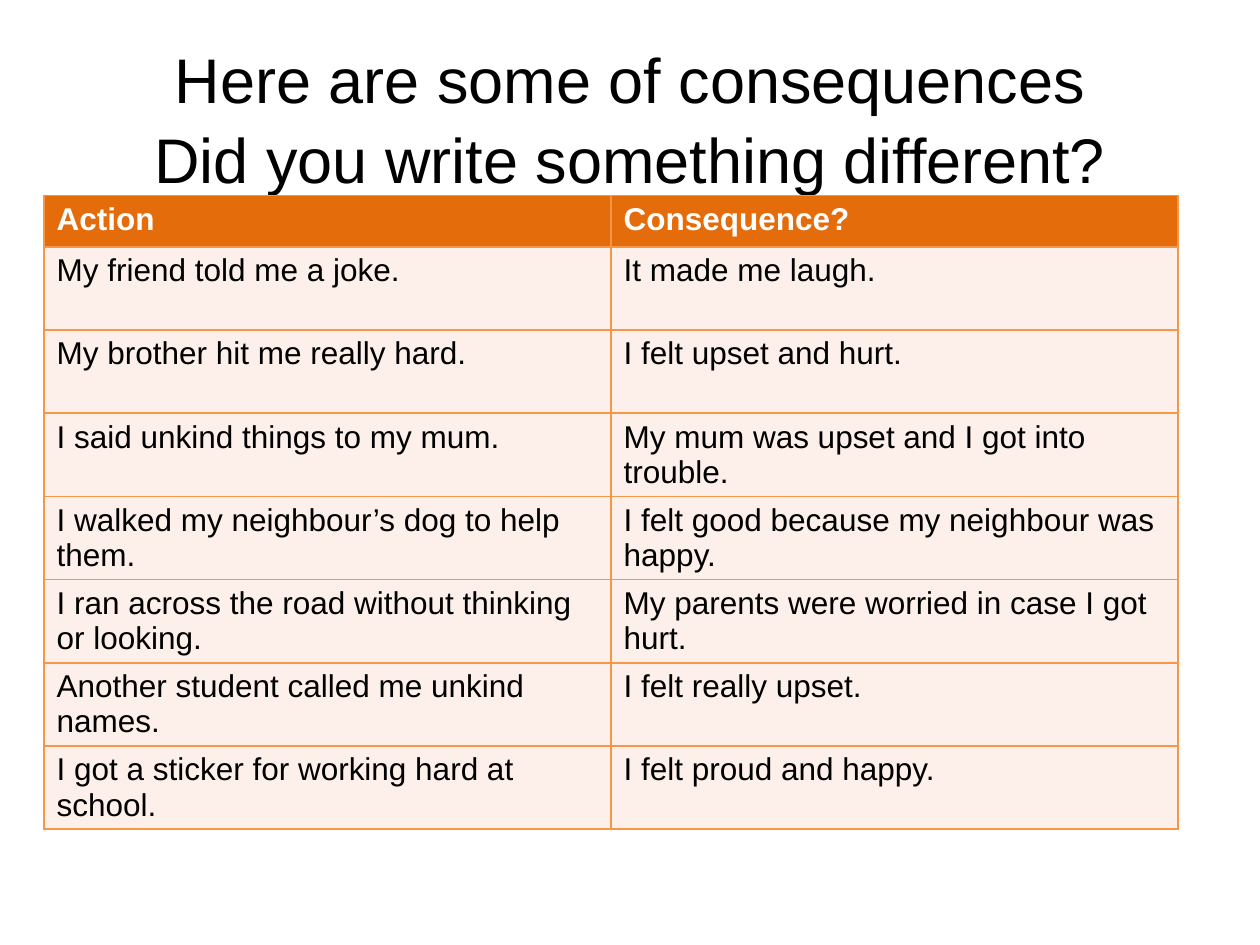
import dataclasses

import lxml.etree
import pptx
import pptx.dml.color
import pptx.enum.text
import pptx.oxml.ns
import pptx.util

Inches = pptx.util.Inches


@dataclasses.dataclass(frozen=True)
class Theme:
    font: str = "Arial"
    title_size: int = 36
    table_size: int = 18
    text: str = "000000"
    header_text: str = "FFFFFF"
    header_fill: str = "E46C0A"
    body_fill: str = "FDEFE9"
    border: str = "F79646"
    border_width: int = 1


THEME = Theme()

TITLE_LINES = ("Here are some of consequences", "Did you write something different?")

ROWS = (
    ("Action", "Consequence?"),
    ("My friend told me a joke.", "It made me laugh."),
    ("My brother hit me really hard.", "I felt upset and hurt."),
    ("I said unkind things to my mum.", "My mum was upset and I got into trouble."),
    ("I walked my neighbour’s dog to help them.", "I felt good because my neighbour was happy."),
    ("I ran across the road without thinking or looking.", "My parents were worried in case I got hurt."),
    ("Another student called me unkind names.", "I felt really upset."),
    ("I got a sticker for working hard at school.", "I felt proud and happy."),
)


def rgb(value):
    return pptx.dml.color.RGBColor.from_string(value)


def add_run(paragraph, text, size, color, bold=False):
    run = paragraph.add_run()
    run.text = text
    run.font.name = THEME.font
    run.font.size = pptx.util.Pt(size)
    run.font.bold = bold
    run.font.color.rgb = rgb(color)


def fill_title(slide):
    title = slide.shapes.title
    title.left, title.top = Inches(0.5), Inches(0.3)
    title.width, title.height = Inches(9), Inches(1.25)
    frame = title.text_frame
    frame.word_wrap = True
    frame.auto_size = pptx.enum.text.MSO_AUTO_SIZE.NONE
    frame.vertical_anchor = pptx.enum.text.MSO_ANCHOR.MIDDLE
    paragraph = frame.paragraphs[0]
    paragraph.alignment = pptx.enum.text.PP_ALIGN.CENTER
    paragraph.line_spacing = 1.05
    for index, line in enumerate(TITLE_LINES):
        if index:
            paragraph.add_line_break()
        add_run(paragraph, line, THEME.title_size, THEME.text)


def set_borders(cell):
    properties = cell._tc.get_or_add_tcPr()
    qualified = pptx.oxml.ns.qn
    for side in ("a:lnL", "a:lnR", "a:lnT", "a:lnB"):
        line = lxml.etree.SubElement(properties, qualified(side))
        line.set("w", str(pptx.util.Pt(THEME.border_width)))
        fill = lxml.etree.SubElement(line, qualified("a:solidFill"))
        lxml.etree.SubElement(fill, qualified("a:srgbClr")).set("val", THEME.border)


def fill_cell(cell, text, is_header):
    set_borders(cell)
    cell.fill.solid()
    cell.fill.fore_color.rgb = rgb(THEME.header_fill if is_header else THEME.body_fill)
    color = THEME.header_text if is_header else THEME.text
    add_run(cell.text_frame.paragraphs[0], text, THEME.table_size, color, is_header)


def add_consequence_table(slide):
    header_height, body_height = Inches(0.41), Inches(0.66)
    total_height = header_height + body_height * (len(ROWS) - 1)
    table = slide.shapes.add_table(
        len(ROWS), len(ROWS[0]), Inches(0.35), Inches(1.55), Inches(9), total_height
    ).table
    table.horz_banding = False
    for row_index, texts in enumerate(ROWS):
        is_header = row_index == 0
        table.rows[row_index].height = header_height if is_header else body_height
        for column_index, text in enumerate(texts):
            fill_cell(table.cell(row_index, column_index), text, is_header)


def main():
    presentation = pptx.Presentation()
    presentation.slide_width = Inches(10)
    presentation.slide_height = Inches(7.5)
    slide = presentation.slides.add_slide(presentation.slide_layouts.get_by_name("Title Only"))
    fill_title(slide)
    add_consequence_table(slide)
    presentation.save("out.pptx")


if __name__ == "__main__":
    main()
